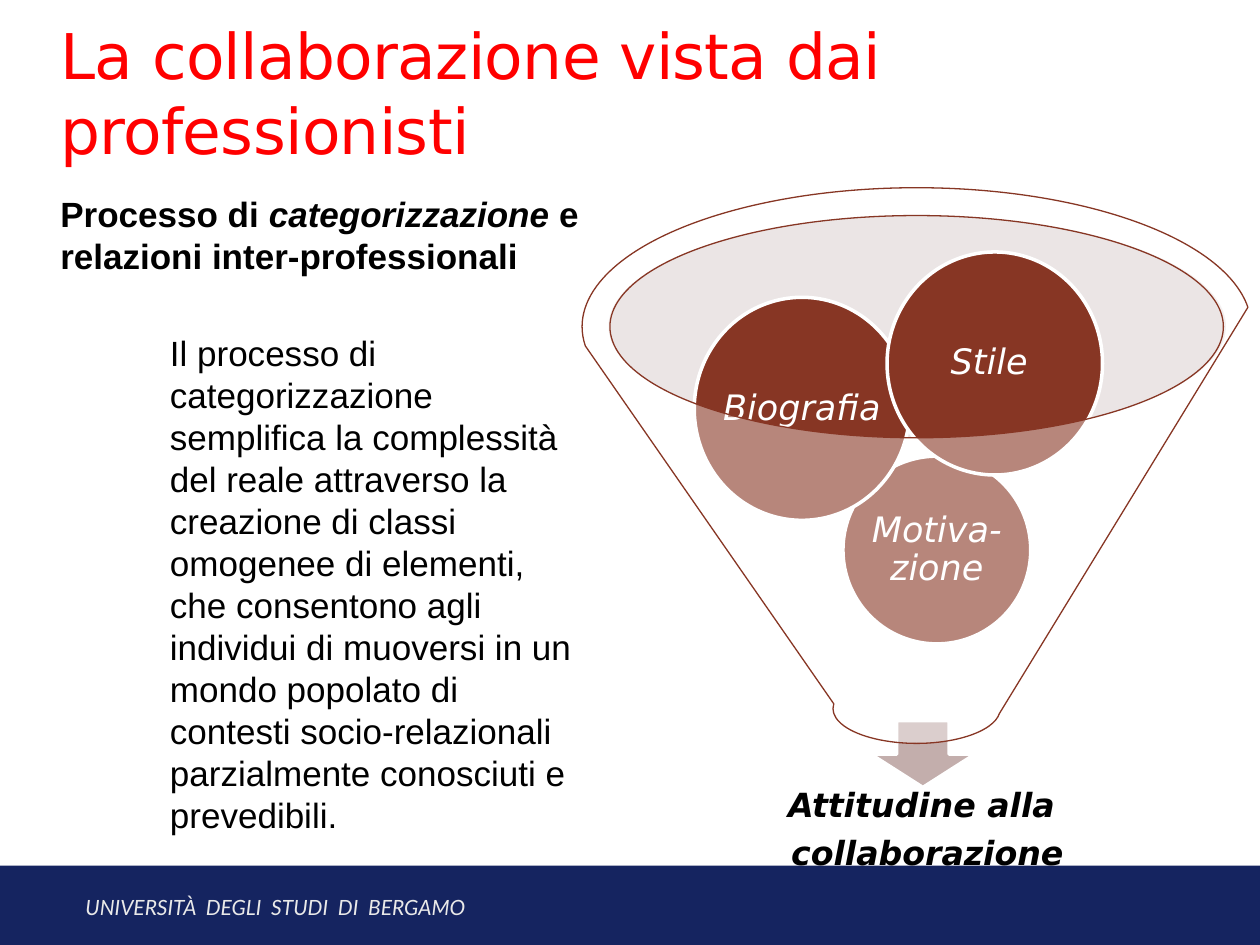
import dataclasses

import lxml.etree
import pptx
import pptx.dml.color
import pptx.enum.shapes
import pptx.enum.text
import pptx.oxml.ns
import pptx.util

RGB = pptx.dml.color.RGBColor
SHAPE = pptx.enum.shapes.MSO_SHAPE
ALIGN = pptx.enum.text.PP_ALIGN
ANCHOR = pptx.enum.text.MSO_ANCHOR

SCALE = 9144  # EMU per px, 100 px to the inch
RED = RGB(0xFF, 0x00, 0x00)
NAVY = RGB(0x15, 0x24, 0x60)
PALE = RGB(0xE9, 0xE9, 0xE9)
WHITE = RGB(0xFF, 0xFF, 0xFF)
BLACK = RGB(0x00, 0x00, 0x00)
RUST = RGB(0x87, 0x36, 0x24)
ROSE = RGB(0xCF, 0xBF, 0xBE)
MAUVE = RGB(0xC3, 0xAE, 0xAC)


@dataclasses.dataclass(frozen=True)
class Box:
    x: int
    y: int
    w: int
    h: int

    def emu(self) -> list[int]:
        return [n * SCALE for n in (self.x, self.y, self.w, self.h)]


@dataclasses.dataclass(frozen=True)
class Style:
    font: str
    size: int
    color: RGB
    bold: bool = False
    italic: bool = False


@dataclasses.dataclass(frozen=True)
class Ball:
    text: str
    box: Box


LABEL = Style("DejaVu Sans", 20, WHITE, italic=True)
RESULT = Style("DejaVu Sans", 19, BLACK, bold=True, italic=True)
BALLS = [
    Ball("Motiva-zione", Box(669, 362, 149, 149)),
    Ball("Biografia", Box(551, 236, 171, 177)),
    Ball("Stile ", Box(704, 200, 171, 177)),
]


def set_font(par, style: Style) -> None:
    font = par.font
    font.name, font.size = style.font, pptx.util.Pt(style.size)
    font.bold, font.italic = style.bold, style.italic
    font.color.rgb = style.color


def add_form(slide, kind, box: Box, fill: RGB, line: RGB | None = None,
             width: float = 2, alpha: int = 100):
    form = slide.shapes.add_shape(kind, *box.emu())
    form.shadow.inherit = False
    form.fill.solid()
    form.fill.fore_color.rgb = fill
    if alpha < 100:
        tint = form.fill._xPr.find(".//" + pptx.oxml.ns.qn("a:srgbClr"))
        lxml.etree.SubElement(tint, pptx.oxml.ns.qn("a:alpha"), val=str(alpha * 1000))
    if line is None:
        form.line.fill.background()
    else:
        form.line.color.rgb = line
        form.line.width = pptx.util.Pt(width)
    return form


def add_text(slide, box: Box, lines: list[str], style: Style):
    frame = slide.shapes.add_textbox(*box.emu()).text_frame
    frame.word_wrap = True
    for i, line in enumerate(lines):
        par = frame.paragraphs[0] if i == 0 else frame.add_paragraph()
        par.text = line
        set_font(par, style)
    return frame


def add_label(slide, box: Box, lines: list[str], style: Style, inset: int) -> None:
    frame = add_text(slide, box, lines, style)
    frame.vertical_anchor = ANCHOR.MIDDLE
    frame.margin_left = frame.margin_right = inset * SCALE
    frame.margin_top = frame.margin_bottom = inset * SCALE
    for par in frame.paragraphs:
        par.alignment = ALIGN.CENTER
        par.line_spacing = 0.9
        par.space_after = pptx.util.Pt(7)


def add_title(slide) -> None:
    title = slide.shapes.title
    title.left, title.top, title.width, title.height = Box(38, 23, 842, 115).emu()
    frame = title.text_frame
    frame.text = "La collaborazione vista dai professionisti"
    frame.word_wrap = True
    frame.auto_size = pptx.enum.text.MSO_AUTO_SIZE.NONE
    frame.vertical_anchor = ANCHOR.BOTTOM
    par = frame.paragraphs[0]
    par.alignment = ALIGN.LEFT
    set_font(par, Style("DejaVu Sans", 36, RED))
    par.runs[0].font._element.set("spc", "-40")


def add_funnel(slide) -> None:
    # Mouth, arrow and result lie behind the balls
    add_form(slide, SHAPE.OVAL, Box(483, 171, 490, 176), ROSE, alpha=40)
    add_form(slide, SHAPE.DOWN_ARROW, Box(691, 572, 83, 53), MAUVE, WHITE)
    add_label(slide, Box(417, 609, 638, 100),
              ["Attitudine alla ", "collaborazione"], RESULT, 15)
    for ball in BALLS:
        add_form(slide, SHAPE.OVAL, ball.box, RUST, WHITE)
        add_label(slide, ball.box, [ball.text], LABEL, 3)
    # The funnel veils what it covers
    add_form(slide, SHAPE.FUNNEL, Box(462, 149, 531, 441), WHITE, RUST, 0.75, 40)


def main() -> None:
    deck = pptx.Presentation()
    deck.slide_width, deck.slide_height = 1000 * SCALE, 750 * SCALE
    slide = deck.slides.add_slide(deck.slide_layouts[5])

    # Footer band
    add_form(slide, SHAPE.RECTANGLE, Box(0, 687, 1000, 68), NAVY)
    add_text(slide, Box(58, 705, 582, 30),
             ["UNIVERSITÀ  DEGLI  STUDI  DI  BERGAMO"],
             Style("Lato", 12, PALE, italic=True))

    add_title(slide)
    add_funnel(slide)

    # Heading with one word in italics
    head = add_text(slide, Box(38, 148, 789, 77),
                    ["Processo di ", "relazioni inter-professionali"],
                    Style("Arial", 20, BLACK, bold=True))
    first = head.paragraphs[0]
    for text, slant in (("categorizzazione", True), (" e", False)):
        run = first.add_run()
        run.text = text
        run.font.italic = slant

    # Body
    add_text(slide, Box(125, 258, 352, 414), [
        "Il processo di categorizzazione semplifica la complessità del reale "
        "attraverso la creazione di classi omogenee di elementi, che consentono "
        "agli individui di muoversi in un mondo popolato di contesti "
        "socio-relazionali parzialmente conosciuti e prevedibili."
    ], Style("Arial", 20, BLACK))

    deck.save("out.pptx")


if __name__ == "__main__":
    main()
